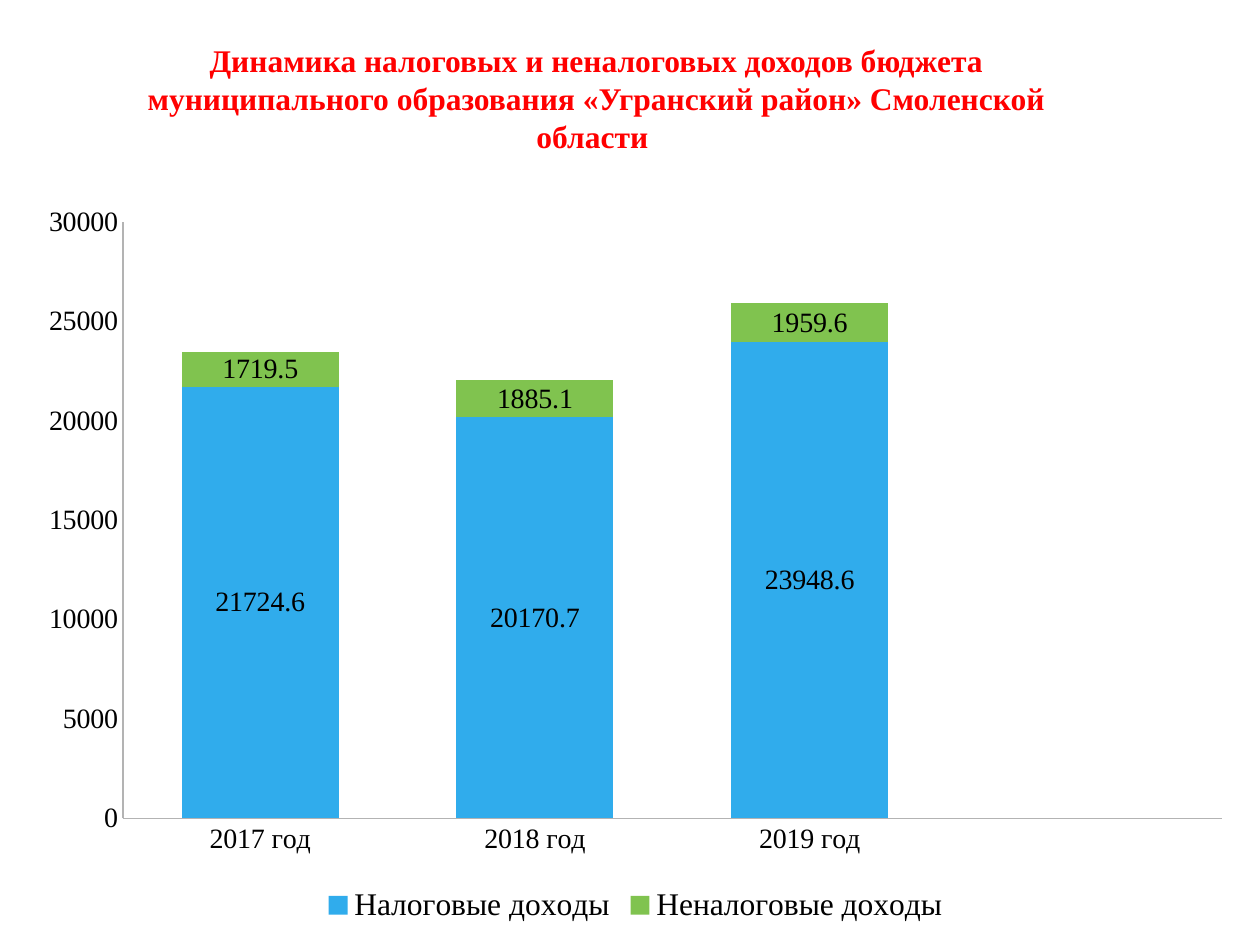
"""Build a slide with a stacked column chart of district budget revenues."""
from dataclasses import dataclass

from lxml import etree
from pptx import Presentation
from pptx import util as u
from pptx.chart.chart import Chart
from pptx.chart.data import CategoryChartData
from pptx.dml.color import RGBColor
from pptx.enum import chart as ch, text
from pptx.oxml.ns import qn


@dataclass(frozen=True)
class Theme:
    """Fonts, type sizes and colours."""
    body: str = "Cabin"
    serif: str = "Times New Roman"
    heading_size: int = 18
    label_size: int = 16
    heading: str = "FF0000"
    ink: str = "000000"
    axis: str = "B3B3B3"


@dataclass(frozen=True)
class Revenue:
    """One kind of revenue by year."""
    name: str
    amounts: tuple
    color: str


THEME = Theme()
YEARS = ("2017 год", "2018 год", "2019 год", "")
REVENUES = (
    Revenue("Налоговые доходы", (21724.6, 20170.7, 23948.6, None), "30ACEC"),
    Revenue("Неналоговые доходы", (1719.5, 1885.1, 1959.6, None), "80C34F"),
)
PLOT_AREA = {"x": 0.08, "y": 0.04, "w": 0.9, "h": 0.81}


def apply(target, values: dict) -> None:
    """Set each named attribute on the target."""
    for name, value in values.items():
        setattr(target, name, value)


def style_font(font, size: int, color: str = THEME.ink,
               name: str = THEME.serif, bold: bool = False) -> None:
    """Give a font its face, size, weight and colour."""
    apply(font, {"name": name, "size": u.Pt(size), "bold": bold})
    font.color.rgb = RGBColor.from_string(color)


def add_heading(slide, wording: str) -> None:
    """Place and format the slide title."""
    heading = slide.shapes.title
    apply(heading, {"left": u.Pt(60), "top": u.Pt(20),
                    "width": u.Pt(561.5), "height": u.Pt(72.7)})
    frame = heading.text_frame
    apply(frame, {"text": wording, "word_wrap": True,
                  "auto_size": text.MSO_AUTO_SIZE.NONE,
                  "vertical_anchor": text.MSO_ANCHOR.TOP})
    paragraph = frame.paragraphs[0]
    apply(paragraph, {"alignment": text.PP_ALIGN.CENTER, "line_spacing": 1.0,
                      "space_before": u.Pt(0)})
    style_font(paragraph.runs[0].font, THEME.heading_size, THEME.heading, bold=True)


def fix_plot_area(chart: Chart) -> None:
    """Set the inner plot area as fractions of the chart."""
    plot_area = chart.plots[0]._element.getparent()
    for old in plot_area.findall(qn("c:layout")):
        plot_area.remove(old)
    layout = etree.Element(qn("c:layout"))
    plot_area.insert(0, layout)
    manual = etree.SubElement(layout, qn("c:manualLayout"))
    settings = {"layoutTarget": "inner", "xMode": "edge", "yMode": "edge", **PLOT_AREA}
    for tag, value in settings.items():
        etree.SubElement(manual, qn(f"c:{tag}")).set("val", str(value))


def style_axis(axis) -> None:
    """Leave an axis with only its line and labels."""
    apply(axis, {"has_major_gridlines": False,
                 "major_tick_mark": ch.XL_TICK_MARK.NONE,
                 "minor_tick_mark": ch.XL_TICK_MARK.NONE})
    style_font(axis.tick_labels.font, THEME.label_size)
    axis.format.line.width = u.Pt(0.75)
    axis.format.line.color.rgb = RGBColor.from_string(THEME.axis)


def style_series(series, revenue: Revenue) -> None:
    """Colour a series and show its values."""
    series.format.fill.solid()
    series.format.fill.fore_color.rgb = RGBColor.from_string(revenue.color)
    labels = series.data_labels
    apply(labels, {"show_value": True, "position": ch.XL_LABEL_POSITION.CENTER})
    style_font(labels.font, THEME.label_size)


def add_revenue_chart(slide) -> None:
    """Add the stacked columns of revenue by year."""
    figures = CategoryChartData(number_format="General")
    figures.categories = YEARS
    for revenue in REVENUES:
        figures.add_series(revenue.name, revenue.amounts)
    chart = slide.shapes.add_chart(
        ch.XL_CHART_TYPE.COLUMN_STACKED, u.Pt(14.4), u.Pt(110.2),
        u.Pt(697.7), u.Pt(420.5), figures).chart
    style_font(chart.font, THEME.heading_size, name=THEME.body)
    apply(chart, {"has_title": False, "has_legend": True})
    apply(chart.legend, {"position": ch.XL_LEGEND_POSITION.BOTTOM,
                         "include_in_layout": False})
    style_font(chart.legend.font, THEME.heading_size)
    columns = chart.plots[0]
    apply(columns, {"gap_width": 75, "overlap": 100, "vary_by_categories": False})
    for axis in (chart.category_axis, chart.value_axis):
        style_axis(axis)
    apply(chart.value_axis, {"minimum_scale": 0, "maximum_scale": 30000,
                             "major_unit": 5000})
    for series, revenue in zip(columns.series, REVENUES):
        style_series(series, revenue)
    fix_plot_area(chart)


def main() -> None:
    """Build and save the slide."""
    deck = Presentation()
    apply(deck, {"slide_width": u.Pt(720), "slide_height": u.Pt(540)})
    slide = deck.slides.add_slide(deck.slide_layouts.get_by_name("Title Only"))
    add_heading(slide, "Динамика налоговых и неналоговых доходов бюджета "
                       "муниципального образования «Угранский район» "
                       "Смоленской области ")
    add_revenue_chart(slide)
    deck.save("out.pptx")


if __name__ == "__main__":
    main()
